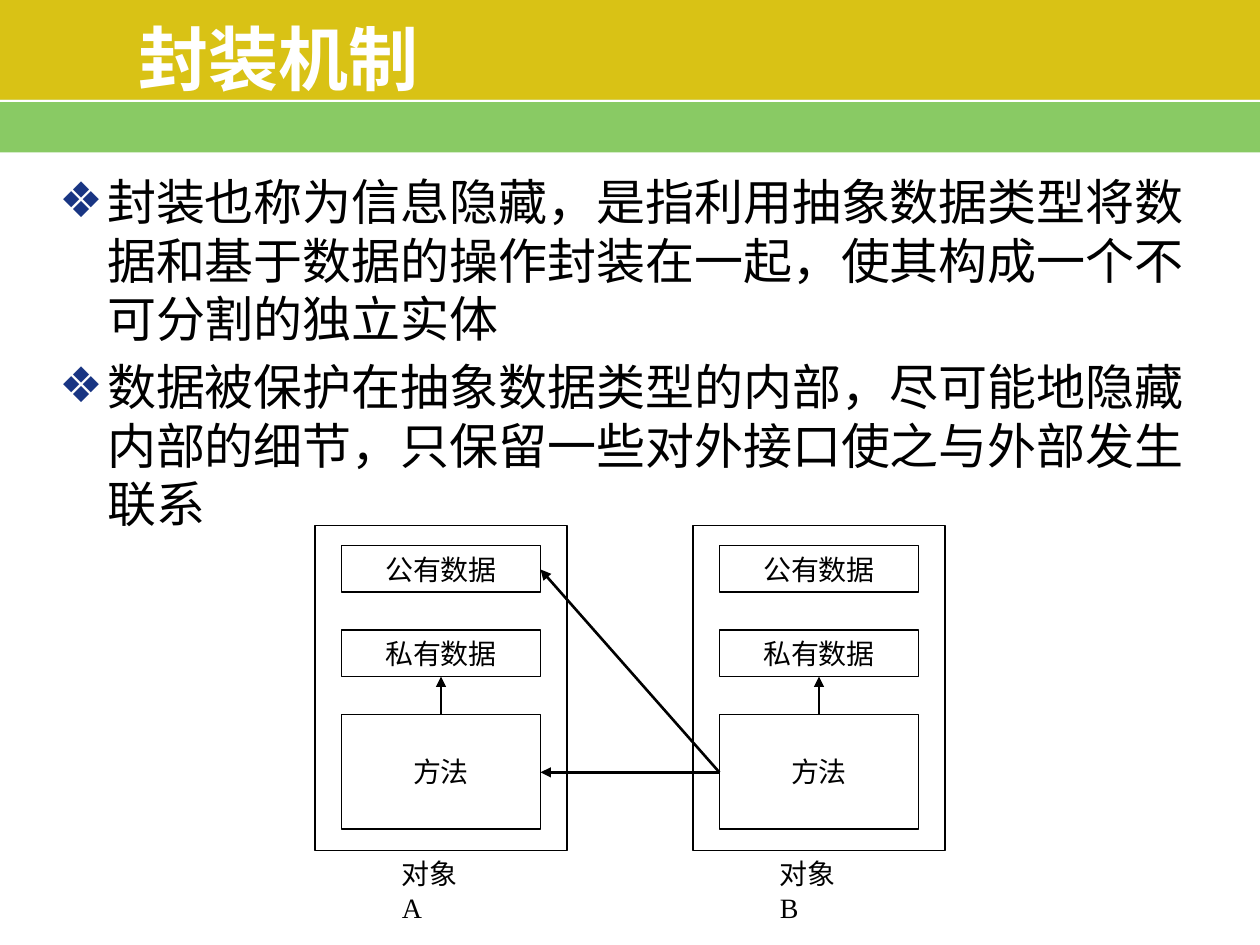
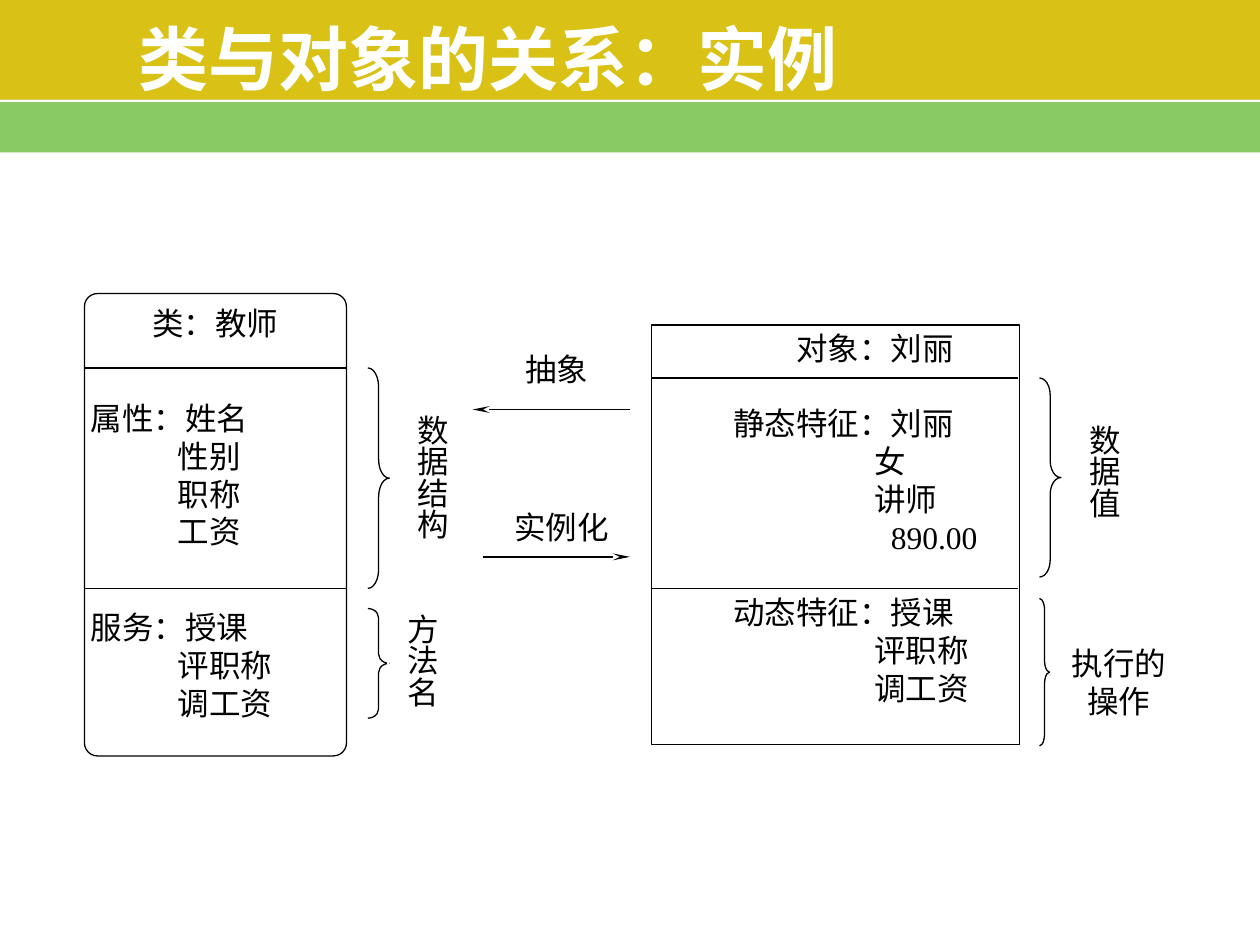
from lxml import etree
from pptx import Presentation
from pptx.dml.color import RGBColor
from pptx.enum import shapes, text
from pptx.oxml.ns import qn
from pptx.util import Inches, Pt

GOLD = RGBColor(0xD9, 0xC2, 0x15)
GREEN = RGBColor(0x89, 0xCA, 0x64)
NAVY = RGBColor(0x19, 0x35, 0x83)
BLACK = RGBColor(0, 0, 0)
WHITE = RGBColor(0xFF, 0xFF, 0xFF)
LATIN, CJK = "Times New Roman", "Noto Sans CJK SC"
SHAPE, ALIGN = shapes.MSO_SHAPE, text.PP_ALIGN
MIDDLE, TOP = text.MSO_ANCHOR.MIDDLE, text.MSO_ANCHOR.TOP
TITLE_ONLY, TITLE_AND_BODY = 5, 1


def add_xml(parent, tag, **attrs):
    return etree.SubElement(parent, qn(tag), **attrs)


class Deck:
    """Holds the shared style and the current slide."""

    def __init__(self):
        self.prs = Presentation()
        self.prs.slide_width, self.prs.slide_height = Inches(10), Inches(7.5)
        self.s = None

    def slide(self, title, layout):
        self.s = self.prs.slides.add_slide(self.prs.slide_layouts[layout])
        # Bands lie behind the placeholders
        bands = [self.box(0, 0.79, 10, 0.42, fill=GREEN, line=None),
                 self.box(0, 0, 10, 0.79, fill=GOLD, line=None),
                 self.line((0, 0.8), (10, 0.8), color=WHITE, width=1)]
        for i, band in enumerate(bands):
            self.s.shapes.element.insert(2 + i, band.element)
        sp = self.s.shapes.title
        self.place(sp, 1, 0.19, 7.75, 0.53)
        tf = self.frame(sp, (0.1, 0.05), MIDDLE)
        self.para(tf.paragraphs[0], title, 40, color=WHITE, font=CJK, bold=True)

    def place(self, sp, x, y, w, h):
        sp.left, sp.top, sp.width, sp.height = map(Inches, (x, y, w, h))

    def frame(self, sp, inset, anchor, vertical=False):
        tf = sp.text_frame
        tf.word_wrap, tf.auto_size = True, text.MSO_AUTO_SIZE.NONE
        tf.margin_left = tf.margin_right = Inches(inset[0])
        tf.margin_top = tf.margin_bottom = Inches(inset[1])
        tf.vertical_anchor = anchor
        if vertical:
            tf._txBody.bodyPr.set("vert", "eaVert")
        return tf

    def para(self, p, words, size, align=ALIGN.LEFT, color=BLACK, font=LATIN,
             bold=False, before=0, indent=0, bullet=None):
        p.text, p.alignment = words, align
        p.line_spacing, p.space_before = Pt(size * 1.2), Pt(before)
        pPr = p._p.get_or_add_pPr()
        if indent:
            pPr.set("marL", str(Inches(indent)))
        if bullet:
            pPr.set("indent", str(-Inches(indent)))
            add_xml(add_xml(pPr, "a:buClr"), "a:srgbClr", val=str(NAVY))
            add_xml(pPr, "a:buChar", char=bullet)
        p.font.size, p.font.bold, p.font.name = Pt(size), bold, font
        p.font.color.rgb = color
        add_xml(pPr.find(qn("a:defRPr")), "a:ea", typeface=CJK)

    def bullets(self, items):
        sp = self.s.placeholders[1]
        self.place(sp, 0.37, 1.31, 9.33, 5.72)
        tf = self.frame(sp, (0.1, 0.05), TOP)
        for i, item in enumerate(items):
            p = tf.add_paragraph() if i else tf.paragraphs[0]
            self.para(p, item, 28, before=5 if i else 0, indent=0.38, bullet="❖")

    def box(self, x, y, w, h, kind=SHAPE.RECTANGLE, fill=WHITE, line=BLACK, adj=None):
        sp = self.s.shapes.add_shape(kind, *map(Inches, (x, y, w, h)))
        sp.shadow.inherit = False
        if adj is not None:
            sp.adjustments[0] = adj
        if fill is None:
            sp.fill.background()
        else:
            sp.fill.solid()
            sp.fill.fore_color.rgb = fill
        if line is None:
            sp.line.fill.background()
        else:
            sp.line.color.rgb, sp.line.width = line, Pt(0.75)
        return sp

    def lines(self, sp, rows, size=18, inset=(0.02, 0.03), anchor=TOP, vertical=False):
        """Each row is (words, paragraph options)."""
        tf = self.frame(sp, inset, anchor, vertical)
        for i, (words, options) in enumerate(rows):
            p = tf.add_paragraph() if i else tf.paragraphs[0]
            self.para(p, words, size, **options)

    def label(self, x, y, w, h, *rows, align=ALIGN.LEFT, vertical=False):
        sp = self.box(x, y, w, h, line=WHITE)
        add_xml(sp.element.spPr.find(qn("a:solidFill"))[0], "a:alpha", val="50000")
        self.lines(sp, [(row, {"align": align}) for row in rows],
                   inset=(0, 0.04 if vertical else 0.03), vertical=vertical)

    def brace(self, x, y, w, h, adj):
        self.box(x, y, w, h, SHAPE.RIGHT_BRACE, fill=None, adj=adj)

    def caption(self, x, y, w, h, words):
        sp = self.s.shapes.add_textbox(*map(Inches, (x, y, w, h)))
        self.lines(sp, [(words, {})], size=16, inset=(0.1, 0.05))

    def line(self, start, end, color=BLACK, width=0.75, head=None):
        """head is (type, width, length) of the arrowhead at the end."""
        cx = self.s.shapes.add_connector(shapes.MSO_CONNECTOR.STRAIGHT,
                                         *map(Inches, start + end))
        cx.line.color.rgb, cx.line.width = color, Pt(width)
        if head:
            add_xml(cx.element.spPr.find(qn("a:ln")), "a:tailEnd",
                    **dict(zip(("type", "w", "len"), head)))
        add_xml(cx.element.spPr, "a:effectLst")
        return cx


def encapsulation(deck):
    deck.slide("封装机制", TITLE_AND_BODY)
    deck.bullets([
        "封装也称为信息隐藏，是指利用抽象数据类型将数据和基于数据的操作封装在一起，使其构成一个不可分割的独立实体",
        "数据被保护在抽象数据类型的内部，尽可能地隐藏内部的细节，只保留一些对外接口使之与外部发生联系",
    ])
    head = ("triangle", "med", "med")
    members = [("私有数据", 5, 0.37), ("方法", 5.67, 0.91), ("公有数据", 4.33, 0.37)]

    # Two objects with the same members
    for name, x in (("对象A", 2.5), ("对象B", 5.5)):
        deck.caption(x + 0.59, 6.75, 0.75, 0.65, name)
        deck.box(x, 4.17, 2, 2.58)
        for words, y, h in members:
            sp = deck.box(x + 0.21, y, 1.58, h)
            deck.lines(sp, [(words, {"align": ALIGN.CENTER})], size=16,
                       inset=(0.1, 0), anchor=MIDDLE)
        deck.line((x + 1, 5.67), (x + 1, 5.37), width=1.5, head=head)

    # Access from B to A
    for y in (4.52, 6.13):
        deck.line((5.71, 6.13), (4.29, y), width=1.5, head=head)


def class_and_object(deck):
    deck.slide("类与对象的关系：实例", TITLE_ONLY)
    center = {"align": ALIGN.CENTER}

    # Object
    deck.label(4.17, 2.75, 0.83, 0.42, "抽象")
    deck.label(4.08, 4, 0.92, 0.33, "实例化")
    sp = deck.box(5.17, 2.58, 2.92, 3.33)
    heading, value = {"indent": 0.63, "before": 21.6}, {"indent": 1.75}
    deck.lines(sp, [
        ("对象：刘丽", {"indent": 0.63, **center}),
        ("静态特征：刘丽", heading), ("女", value), ("讲师", value),
        ("890.00", {"indent": 1.88}),
        ("动态特征：授课", heading), ("评职称", value), ("调工资", value),
    ])
    for y in (3, 4.67):
        deck.line((5.17, y), (8.08, y))
    deck.label(8.33, 3.33, 0.58, 0.92, "数据值", vertical=True)
    deck.brace(8.25, 4.75, 0.08, 1.17, 1.17)
    deck.brace(8.25, 3, 0.17, 1.58, 0.79)
    deck.label(8.42, 5.08, 0.92, 0.92, "执行的", "操作", align=ALIGN.CENTER)

    # Class
    deck.brace(2.92, 4.83, 0.17, 0.87, 0.43)
    deck.brace(2.92, 2.92, 0.17, 1.75, 0.88)
    deck.label(3.08, 4.83, 0.42, 0.92, "方法名", vertical=True)
    deck.label(3.25, 3.25, 0.33, 1.33, "数据结构", vertical=True)
    sp = deck.box(0.67, 2.33, 2.08, 3.67, SHAPE.ROUNDED_RECTANGLE, adj=0.05)
    heading, item = {"before": 33}, {"indent": 0.69}
    deck.lines(sp, [
        ("类：教师", center),
        ("属性：姓名", heading), ("性别", item), ("职称", item), ("工资", item),
        ("服务：授课", heading), ("评职称", item), ("调工资", item),
    ], inset=(0.02, 0.05))
    for y in (4.67, 2.92):
        deck.line((0.67, y), (2.75, y))

    # Arrows between class and object
    head = ("stealth", "sm", "lg")
    deck.line((5, 3.25), (3.75, 3.25), head=head)
    deck.line((3.83, 4.42), (5, 4.42), head=head)


def main():
    deck = Deck()
    encapsulation(deck)
    class_and_object(deck)
    deck.prs.save("out.pptx")


if __name__ == "__main__":
    main()
